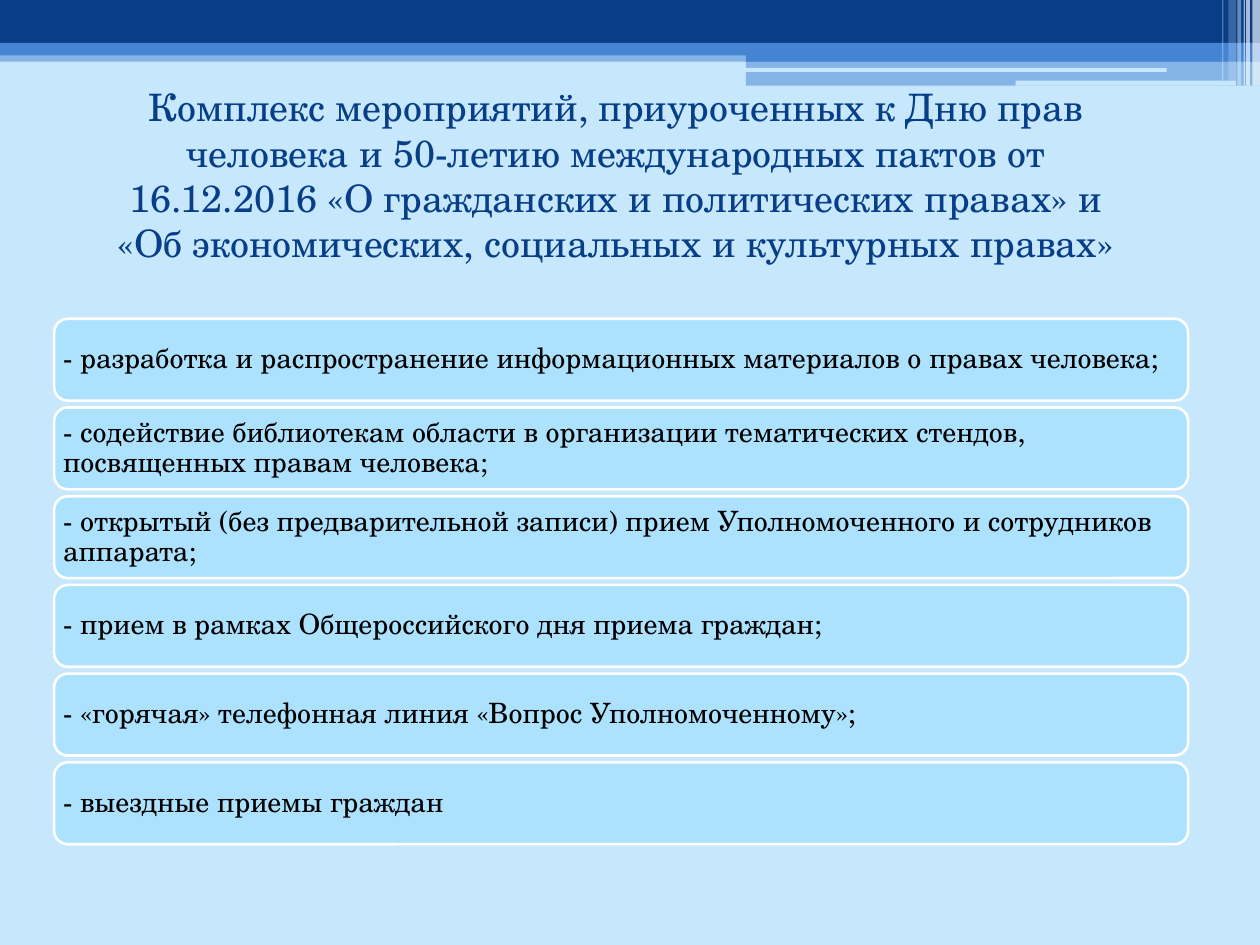
import pptx
import pptx.util
import pptx.dml.color
import pptx.enum.shapes
import pptx.enum.text
import pptx.oxml
import pptx.oxml.ns

# The slide is a grid of 100 columns by 75 rows; boxes are (col, row, cols, rows)
COLS, ROWS = 100, 75
FONT = "TeX Gyre Schola"
NAVY, BLUE, PALE, SKY, WHITE, BLACK = (
    "073E87", "4584D3", "C6E7FC", "ADE2FE", "FFFFFF", "000000")
RECT = pptx.enum.shapes.MSO_SHAPE.RECTANGLE
ROUND = pptx.enum.shapes.MSO_SHAPE.ROUNDED_RECTANGLE

prs = pptx.Presentation()
prs.slide_width = pptx.util.Inches(10)
prs.slide_height = pptx.util.Inches(7.5)


def color(value):
    return pptx.dml.color.RGBColor.from_string(value)


def place(col, row, cols, rows):
    w, h = prs.slide_width / COLS, prs.slide_height / ROWS
    return [round(n) for n in (col * w, row * h, cols * w, rows * h)]


def add_box(s, kind, box, fill, alpha=100, line=None):
    sp = s.shapes.add_shape(kind, *place(*box))
    sp.shadow.inherit = False
    sp.fill.solid()
    sp.fill.fore_color.rgb = color(fill)
    if alpha < 100:
        clr = sp.fill._xPr.find(".//" + pptx.oxml.ns.qn("a:srgbClr"))
        clr.append(pptx.oxml.parse_xml(
            f'<a:alpha {pptx.oxml.ns.nsdecls("a")} val="{alpha * 1000}"/>'))
    if line:
        sp.line.color.rgb = color(line)
        sp.line.width = pptx.util.Pt(1.5)
    else:
        sp.line.fill.background()
    return sp


def write(sp, text, size, fill, align, inset, spacing=1.0):
    tf = sp.text_frame
    tf.word_wrap = True
    tf.vertical_anchor = pptx.enum.text.MSO_ANCHOR.MIDDLE
    tf.margin_left = tf.margin_right = pptx.util.Inches(inset)
    tf.margin_top = tf.margin_bottom = pptx.util.Inches(0.05)
    p = tf.paragraphs[0]
    p.alignment = align
    p.line_spacing = spacing
    r = p.add_run()
    r.text = text
    r.font.name = FONT
    r.font.size = pptx.util.Pt(size)
    r.font.color.rgb = color(fill)


def add_header(s, box):
    left, top, width, height = box
    right = left + width
    # Full-width bands: offset, height, colour, opacity
    for dy, h, fill, alpha in [(4, 0.9, BLUE, 50), (0, 3.4, NAVY, 100),
                               (3.4, 1, BLUE, 100)]:
        add_box(s, RECT, (left, top + dy, width, h), fill, alpha)
    # Step on the right
    step = 0.408 * width
    add_box(s, RECT, (right - step, top + 3.9, step, 1), BLUE)
    add_box(s, RECT, (right - step, top + 4.8, step, height - 4.8), BLUE, 50)
    # Thin light strips
    for dx, dy, w, h in [(59.1, 5.4, 33.5, 0.3), (80.6, 6.4, 17.5, 0.4)]:
        add_box(s, ROUND, (left + dx, top + dy, w, h), PALE)
    # Vertical stripes: distance from the right edge, width, height, opacity
    for dx, w, h, alpha in [(0.6, 0.6, height, 65), (1.1, 0.3, height, 65),
                            (1.3, 0.1, height, 60), (1.8, 0.3, height, 40),
                            (2.5, 0.6, 6.4, 20), (3, 0.1, 6.4, 30)]:
        add_box(s, RECT, (right - dx, top, w, h), WHITE, alpha)


def add_title(s, box, text):
    sp = s.shapes.add_textbox(*place(*box))
    write(sp, text, 21.6, NAVY, pptx.enum.text.PP_ALIGN.CENTER, 0.1)


def add_list(s, box, items, gap=0.54):
    left, top, width, height = box
    h = (height - gap * (len(items) - 1)) / len(items)
    for i, text in enumerate(items):
        sp = add_box(s, ROUND, (left, top + i * (h + gap), width, h),
                     SKY, line=WHITE)
        write(sp, text, 16, BLACK, pptx.enum.text.PP_ALIGN.LEFT, 0.04, 0.9)


def main():
    s = prs.slides.add_slide(prs.slide_layouts[6])
    s.background.fill.solid()
    s.background.fill.fore_color.rgb = color(PALE)
    add_header(s, (0, 0, COLS, 6.8))
    add_title(s, (6.7, 4.4, 84.4, 18.9),
              "Комплекс мероприятий, приуроченных к Дню прав человека и "
              "50-летию международных пактов от 16.12.2016 «О гражданских и "
              "политических правах» и «Об экономических, социальных и "
              "культурных правах»")
    add_list(s, (4.3, 25.3, 90, 41.7), [
        "- разработка и распространение информационных материалов о правах человека;",
        "- содействие библиотекам области в организации тематических стендов, "
        "посвященных правам человека;",
        "- открытый (без предварительной записи) прием Уполномоченного и "
        "сотрудников аппарата;",
        "- прием в рамках Общероссийского дня приема граждан;",
        "- «горячая» телефонная линия «Вопрос Уполномоченному»;",
        "- выездные приемы граждан",
    ])
    prs.save("out.pptx")


if __name__ == "__main__":
    main()
